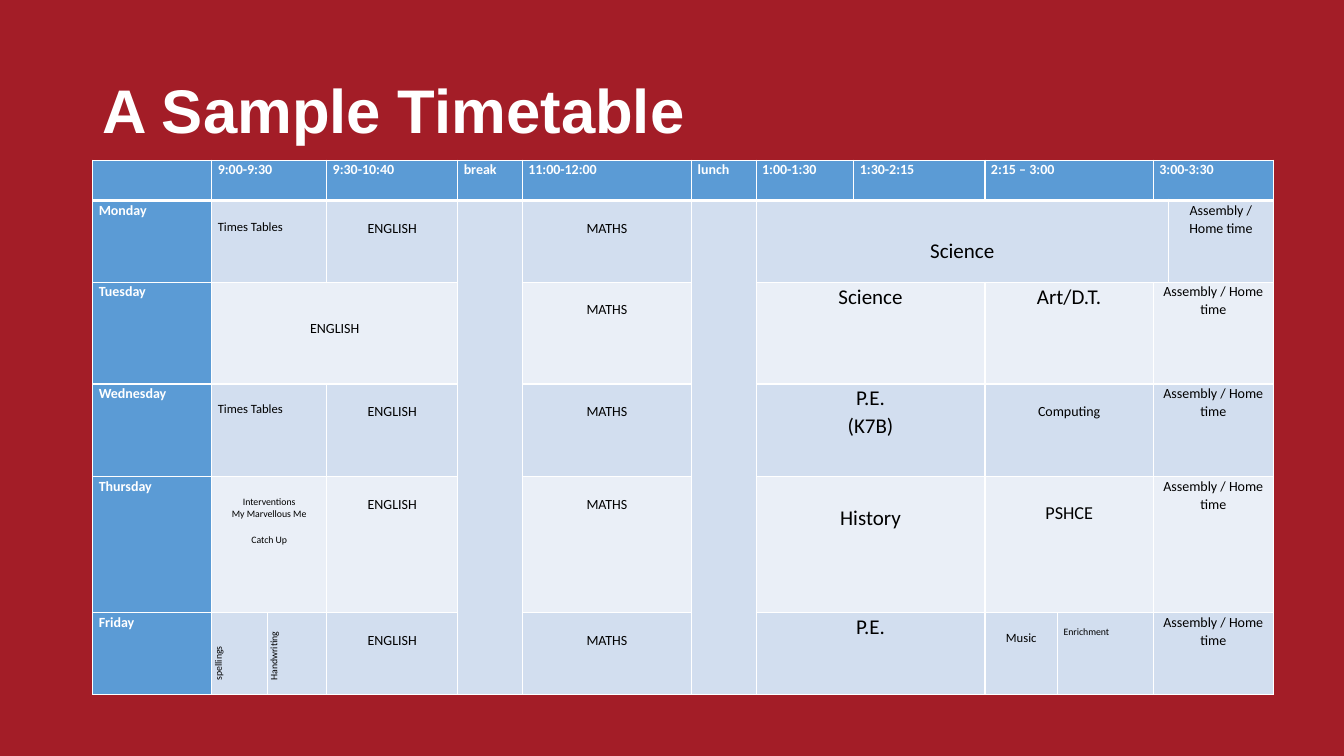
import pptx
import pptx.util
import pptx.dml.color
import pptx.enum.text
import lxml.etree

Inches, Pt = pptx.util.Inches, pptx.util.Pt
ALIGN = pptx.enum.text.PP_ALIGN
LEFT, CENTER = ALIGN.LEFT, ALIGN.CENTER

COLORS = {"page": "A31D27", "white": "FFFFFF", "black": "000000",
          "heading": "5B9BD5", "dark_band": "D2DEEF", "light_band": "EAEFF7"}
TITLE = "A Sample Timetable"
COLUMN_WIDTHS = [1.18, 0.55, 0.59, 1.3, 0.64, 1.68, 0.64, 0.97, 1.3, 0.72, 0.95, 0.15, 1.04]
ROW_HEIGHTS = [0.4, 0.81, 1.01, 0.92, 1.35, 0.81]
DAYS = ["Monday", "Tuesday", "Wednesday", "Thursday", "Friday"]
TIMES = [(1, 2, "9:00-9:30"), (3, 1, "9:30-10:40"), (4, 1, "break"), (5, 1, "11:00-12:00"),
         (6, 1, "lunch"), (7, 1, "1:00-1:30"), (8, 1, "1:30-2:15"),
         (9, 2, "2:15 – 3:00"), (11, 2, "3:00-3:30")]
BREAK_COLUMNS = [4, 6]
LESSONS = [
    (1, 1, 2, "Times Tables", 9, 10, LEFT),
    (1, 3, 1, "ENGLISH", 10, 10, CENTER),
    (1, 7, 5, "Science", 15, 20, CENTER),
    (1, 12, 1, "Assembly / Home time", 10, 0, CENTER),
    (2, 1, 3, "ENGLISH", 10, 20, CENTER),
    (2, 7, 2, "Science", 15, 0, CENTER),
    (2, 9, 2, "Art/D.T.", 15, 0, CENTER),
    (3, 1, 2, "Times Tables", 9, 9, LEFT),
    (3, 3, 1, "ENGLISH", 10, 10, CENTER),
    (3, 7, 2, "P.E.\n(K7B)", 15, 0, CENTER),
    (3, 9, 2, "Computing", 10, 10, CENTER),
    (4, 1, 2, "Interventions\nMy Marvellous Me\nCatch Up", 7, 10, CENTER),
    (4, 3, 1, "ENGLISH", 10, 10, CENTER),
    (4, 7, 2, "History", 15, 15, CENTER),
    (4, 9, 2, "PSHCE", 13, 13, CENTER),
    (5, 1, 1, "spellings", 7, 0, LEFT),
    (5, 2, 1, "Handwriting", 7, 0, LEFT),
    (5, 3, 1, "ENGLISH", 10, 10, CENTER),
    (5, 7, 2, "P.E.", 15, 0, CENTER),
    (5, 9, 1, "Music", 9, 9, CENTER),
    (5, 10, 1, "Enrichment", 7, 7, LEFT),
]
LESSONS += [(row, 5, 1, "MATHS", 10, 10, CENTER) for row in range(1, 6)]
LESSONS += [(row, 11, 2, "Assembly / Home time", 10, 0, CENTER) for row in range(2, 6)]
UPRIGHT = ["spellings", "Handwriting"]
LINE_SPACING = 1.07
LINE_HEIGHT = 1.22 * LINE_SPACING


def color(name):
    return pptx.dml.color.RGBColor.from_string(COLORS[name])


def style(para, font, size, ink, bold, align, spacing):
    para.alignment = align
    para.line_spacing = spacing
    for span in para.runs:
        span.font.name = font
        span.font.size = Pt(size)
        span.font.bold = bold
        span.font.color.rgb = color(ink)


def add_borders(cell, row):
    properties = cell._tc.get_or_add_tcPr()
    widths = {"lnL": 1, "lnR": 1, "lnT": 3 if row == 1 else 1, "lnB": 3 if row == 0 else 1}
    for side, width in widths.items():
        line = lxml.etree.SubElement(properties, pptx.oxml.ns.qn("a:" + side), w=str(Pt(width)))
        fill = lxml.etree.SubElement(line, pptx.oxml.ns.qn("a:solidFill"))
        lxml.etree.SubElement(fill, pptx.oxml.ns.qn("a:srgbClr"), val=COLORS["white"])


def band(row, column):
    if row == 0 or column == 0:
        return "heading"
    return "dark_band" if row % 2 or column in BREAK_COLUMNS else "light_band"


def write(row, column, columns, text, size, above, align):
    cell = timetable.cell(row, column)
    if columns > 1:
        cell.merge(timetable.cell(row, column + columns - 1))
    cell.text_frame.text = text
    cell.margin_top = Pt(above * LINE_HEIGHT)
    heading = row == 0 or column == 0
    for para in cell.text_frame.paragraphs:
        style(para, "Calibri", size, "white" if heading else "black", heading, align, LINE_SPACING)
        if para.text == "Catch Up":
            para.space_before = Pt(size * LINE_HEIGHT)
        if text in UPRIGHT:
            para._p.get_or_add_pPr().set("marL", str(Inches(0.08)))
    if text in UPRIGHT:
        cell._tc.get_or_add_tcPr().set("vert", "vert270")


deck = pptx.Presentation()
deck.slide_width, deck.slide_height = Inches(13.33), Inches(7.5)
page = deck.slides.add_slide(deck.slide_layouts[6])
page.background.fill.solid()
page.background.fill.fore_color.rgb = color("page")

box = page.shapes.add_textbox(Inches(0.92), Inches(0.4), Inches(11.5), Inches(1.45))
box.text_frame.word_wrap = True
box.text_frame.vertical_anchor = pptx.enum.text.MSO_ANCHOR.MIDDLE
box.text_frame.text = TITLE
style(box.text_frame.paragraphs[0], "Arial", 44, "white", True, LEFT, 0.9)

timetable = page.shapes.add_table(
    len(ROW_HEIGHTS), len(COLUMN_WIDTHS), Inches(0.92), Inches(1.59),
    Inches(sum(COLUMN_WIDTHS)), Inches(sum(ROW_HEIGHTS))).table
for column, width in enumerate(COLUMN_WIDTHS):
    timetable.columns[column].width = Inches(width)
for row, height in enumerate(ROW_HEIGHTS):
    timetable.rows[row].height = Inches(height)
    for column in range(len(COLUMN_WIDTHS)):
        cell = timetable.cell(row, column)
        cell.margin_left = cell.margin_right = Inches(0.06)
        cell.margin_top = cell.margin_bottom = 0
        add_borders(cell, row)
        cell.fill.solid()
        cell.fill.fore_color.rgb = color(band(row, column))

for column, columns, time in TIMES:
    write(0, column, columns, time, 10, 0, LEFT)
for row, day in enumerate(DAYS, 1):
    write(row, 0, 1, day, 10, 0, LEFT)
for lesson in LESSONS:
    write(*lesson)
for column in BREAK_COLUMNS:
    timetable.cell(1, column).merge(timetable.cell(len(DAYS), column))

deck.save("out.pptx")
